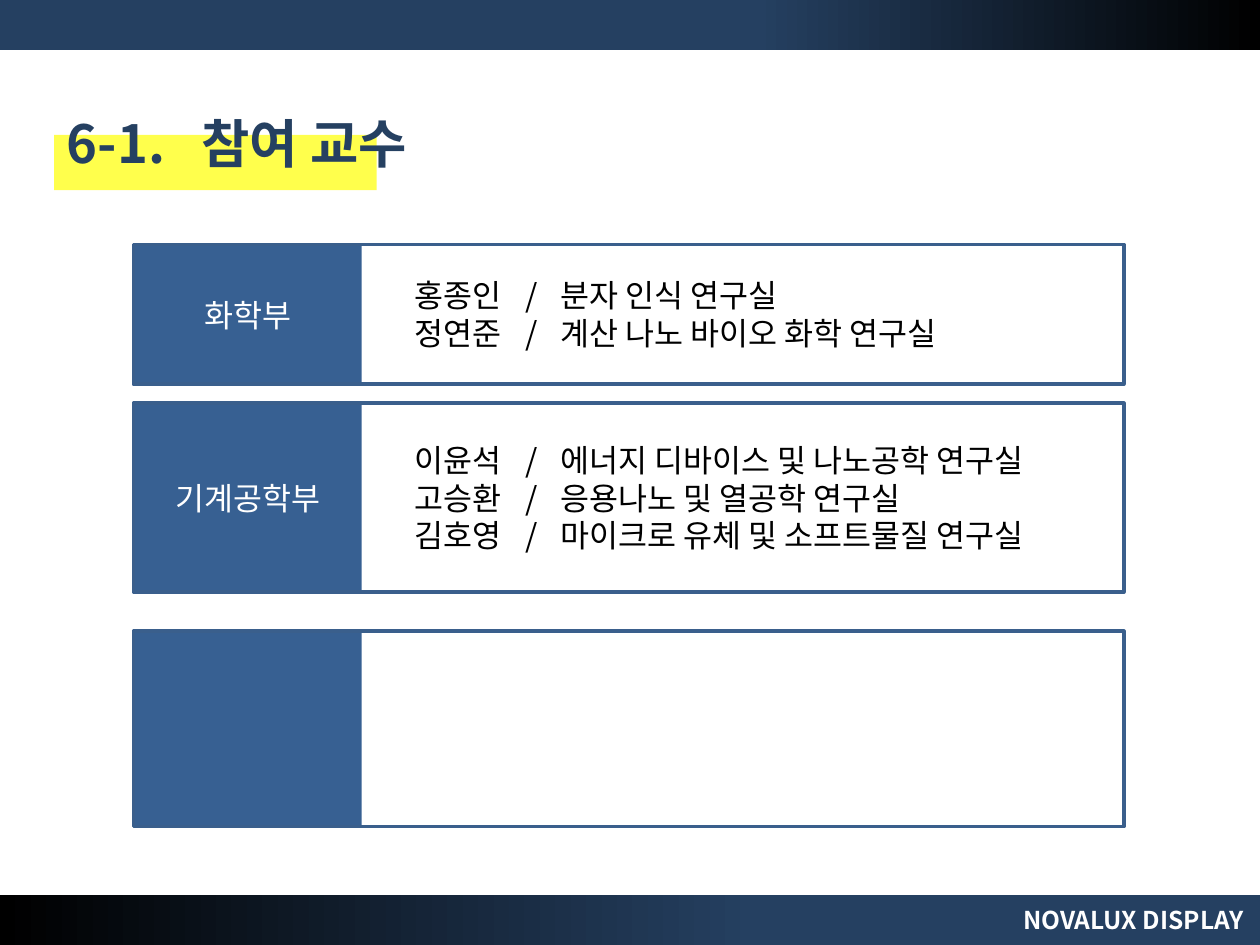
"""Build the slide listing the participating professors by department."""
from lxml.etree import SubElement
from pptx import Presentation
from pptx.dml.color import RGBColor
from pptx.enum.shapes import MSO_SHAPE
from pptx.enum.text import MSO_ANCHOR, PP_ALIGN
from pptx.oxml import parse_xml
from pptx.oxml.ns import nsdecls, qn
from pptx.util import Inches, Pt

FONT = "Noto Sans CJK KR"
NAVY = RGBColor(0x25, 0x40, 0x61)
BLUE = RGBColor(0x37, 0x60, 0x92)
OUTLINE = RGBColor(0x3A, 0x5F, 0x8C)
YELLOW = RGBColor(0xFF, 0xFF, 0x00)
WHITE = RGBColor(0xFF, 0xFF, 0xFF)
BLACK = RGBColor(0x00, 0x00, 0x00)

TITLE = "6-1.\t참여 교수"
FOOTER = "NOVALUX DISPLAY"
DEPARTMENTS = [
    {"name": "화학부", "top": 1.94, "height": 1.11, "professors": [
        ("홍종인", "분자 인식 연구실"),
        ("정연준", "계산 나노 바이오 화학 연구실")]},
    {"name": "기계공학부", "top": 3.2, "height": 1.5, "professors": [
        ("이윤석", "에너지 디바이스 및 나노공학 연구실"),
        ("고승환", "응용나노 및 열공학 연구실"),
        ("김호영", "마이크로 유체 및 소프트물질 연구실")]},
    {"name": "", "top": 5.01, "height": 1.55, "professors": []},
]
BANDS = [(0, 60, 0), (7.1, 40, 180)]
ROW_LEFT, ROW_WIDTH, LABEL_WIDTH = 1.06, 7.86, 1.81
LIST_LEFT, LIST_WIDTH, LINE_HEIGHT = 3.19, 5.32, 0.3
TITLE_TABS, LIST_TABS = (1.07,), (0.88, 1.16)


def add_box(slide, left, top, width, height, fill=None, line=None):
    shape = slide.shapes.add_shape(
        MSO_SHAPE.RECTANGLE, Inches(left), Inches(top), Inches(width), Inches(height))
    shape.shadow.inherit = False
    if fill is None:
        shape.fill.background()
    else:
        shape.fill.solid()
        shape.fill.fore_color.rgb = fill
    if line is None:
        shape.line.fill.background()
    else:
        shape.line.color.rgb = line
        shape.line.width = Pt(2)
    return shape


def add_band(slide, top, solid_until, angle):
    band = add_box(slide, 0, top, 10, 0.4)
    stops = "".join(
        f'<a:gs pos="{position * 1000}"><a:srgbClr val="{color}"/></a:gs>'
        for position, color in ((0, NAVY), (solid_until, NAVY), (100, BLACK)))
    gradient = parse_xml(
        f'<a:gradFill {nsdecls("a")} rotWithShape="1"><a:gsLst>{stops}</a:gsLst>'
        f'<a:lin ang="{angle * 60000}" scaled="0"/></a:gradFill>')
    properties = band._element.spPr
    properties.replace(properties.find(qn("a:noFill")), gradient)


def write(shape, lines, size, color, bold=False, align=PP_ALIGN.LEFT,
          anchor=MSO_ANCHOR.TOP, tabs=(), wrap=False):
    frame = shape.text_frame
    frame.text = "\n".join(lines)
    frame.word_wrap = wrap
    frame.vertical_anchor = anchor
    for paragraph in frame.paragraphs:
        paragraph.alignment = align
        font = paragraph.font
        font.name, font.size, font.bold = FONT, Pt(size), bold
        font.color.rgb = color
        properties = paragraph._p.pPr
        SubElement(properties.find(qn("a:defRPr")), qn("a:ea"), typeface=FONT)
        if tabs:
            stops = parse_xml(f'<a:tabLst {nsdecls("a")}/>')
            for position in tabs:
                SubElement(stops, qn("a:tab"), pos=str(Inches(position)), algn="l")
            properties.insert(0, stops)


def add_text(slide, left, top, width, height, lines, size, color, **style):
    box = slide.shapes.add_textbox(
        Inches(left), Inches(top), Inches(width), Inches(height))
    write(box, lines, size, color, **style)


def add_department(slide, name, top, height, professors):
    label = add_box(slide, ROW_LEFT, top, LABEL_WIDTH, height, fill=BLUE)
    add_box(slide, ROW_LEFT, top, ROW_WIDTH, height, line=OUTLINE)
    if name:
        write(label, [name], 18, WHITE, align=PP_ALIGN.CENTER,
              anchor=MSO_ANCHOR.MIDDLE, wrap=True)
    if professors:
        list_height = LINE_HEIGHT * len(professors) + 0.1
        lines = [f"{person}\t/\t{laboratory}" for person, laboratory in professors]
        add_text(slide, LIST_LEFT, top + (height - list_height) / 2, LIST_WIDTH,
                 list_height, lines, 18, BLACK, tabs=LIST_TABS)


def main():
    presentation = Presentation()
    presentation.slide_width, presentation.slide_height = Inches(10), Inches(7.5)
    slide = presentation.slides.add_slide(presentation.slide_layouts[5])

    for band in BANDS:
        add_band(slide, *band)
    add_text(slide, 7.92, 7.13, 2.05, 0.34, [FOOTER], 14, WHITE,
             bold=True, align=PP_ALIGN.RIGHT)

    highlight = add_box(slide, 0.43, 1.07, 2.56, 0.44, fill=YELLOW)
    color = highlight._element.spPr.find(qn("a:solidFill"))[0]
    SubElement(color, qn("a:alpha"), val="70000")

    title = slide.shapes.title
    title.left, title.top = Inches(0.43), Inches(0.83)
    title.width, title.height = Inches(2.99), Inches(0.61)
    write(title, [TITLE], 30, NAVY, bold=True, tabs=TITLE_TABS)
    slide.shapes._spTree.append(title._element)

    for department in DEPARTMENTS:
        add_department(slide, **department)
    presentation.save("out.pptx")


if __name__ == "__main__":
    main()
